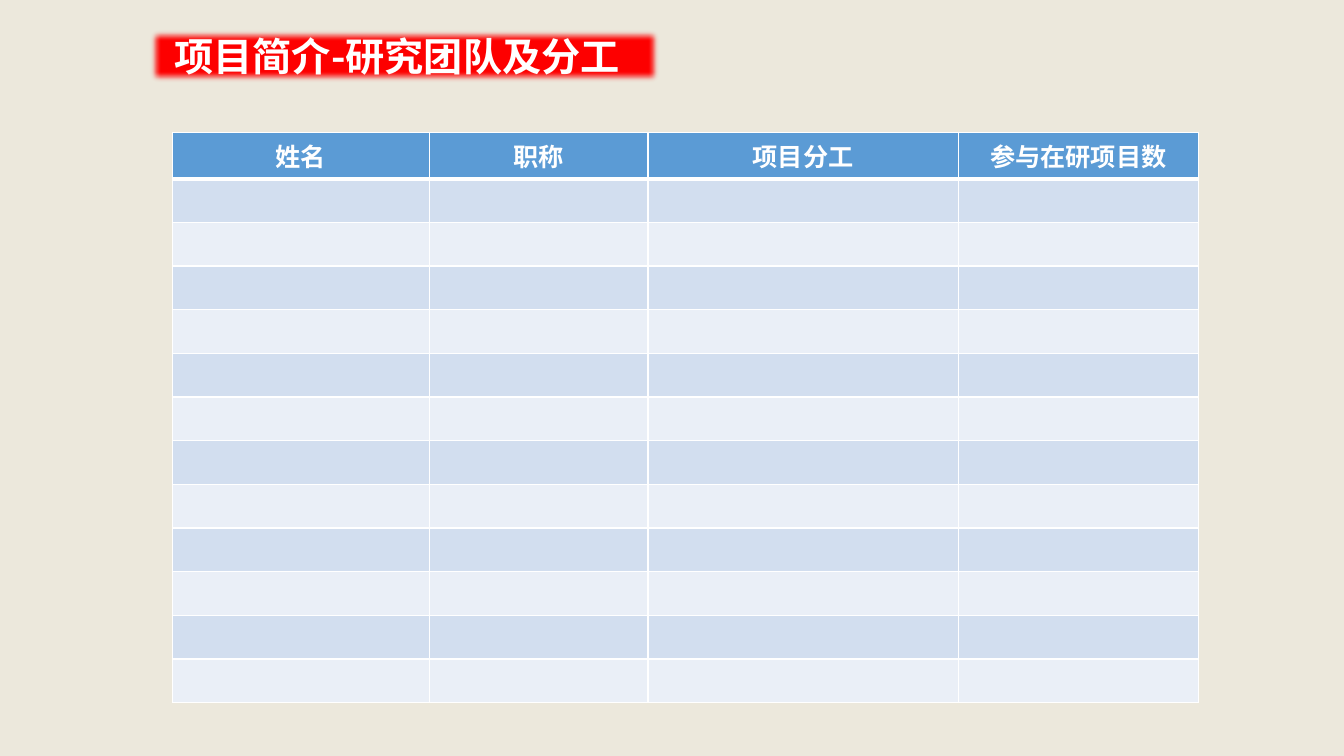
from dataclasses import dataclass
from lxml.etree import SubElement as Sub
from pptx import Presentation
from pptx.dml.color import RGBColor as Rgb
from pptx.enum.shapes import MSO_SHAPE as Shape
from pptx.enum.text import MSO_ANCHOR as Anchor, PP_ALIGN as Align
from pptx.oxml.ns import qn
from pptx.util import Cm, Pt


@dataclass(frozen=True)
class Theme:
    back: str = "ECE8DC"
    banner: str = "FF0000"
    head: str = "5B9BD5"
    bands: tuple = ("D2DEEF", "EAEFF7")
    white: str = "FFFFFF"
    latin: str = "Calibri"
    asian: str = "Noto Sans CJK SC"
    title: int = 28
    label: int = 18
    thin: int = 1
    thick: int = 3


THEME = Theme()
HEADS = ("姓名", "职称", "项目分工", "参与在研项目数")
WIDTHS = (6.48, 5.51, 7.82, 6.05)
ROWS = 13


def paint(fill, color):
    fill.solid()
    fill.fore_color.rgb = Rgb.from_string(color)


def write(para, text, size, latin):
    """Add one bold white run."""
    run = para.add_run()
    run.text = text
    font = run.font
    font.size, font.bold, font.name = Pt(size), True, latin
    font.color.rgb = Rgb.from_string(THEME.white)
    Sub(run._r.get_or_add_rPr(), qn("a:ea"), typeface=THEME.asian)


def edge(cell, base):
    """Draw the four white borders, which go before the cell fill."""
    props = cell._tc.get_or_add_tcPr()
    for side in ("L", "R", "T", "B"):
        width = base if side == "B" else THEME.thin
        line = Sub(props, qn(f"a:ln{side}"), w=str(Pt(width)))
        fill = Sub(line, qn("a:solidFill"))
        Sub(fill, qn("a:srgbClr"), val=THEME.white)


def banner(slide, left, top, width, height):
    """Red title bar with soft edges."""
    bar = slide.shapes.add_shape(
        Shape.RECTANGLE, Cm(left), Cm(top), Cm(width), Cm(height))
    bar.shadow.inherit = False
    paint(bar.fill, THEME.banner)
    bar.line.fill.background()
    soft = bar._element.spPr.find(qn("a:effectLst"))
    Sub(soft, qn("a:softEdge"), rad=str(Pt(5)))
    frame = bar.text_frame
    frame.word_wrap = False
    frame.vertical_anchor = Anchor.MIDDLE
    frame.margin_left = Cm(0.67)
    frame.margin_top = frame.margin_bottom = 0
    para = frame.paragraphs[0]
    para.alignment = Align.LEFT
    write(para, "项目简介-研究团队及分工", THEME.title, THEME.asian)


def roster(slide, left, top, width, height):
    """Team table: a header row above blank banded rows."""
    grid = slide.shapes.add_table(
        ROWS, len(HEADS), Cm(left), Cm(top), Cm(width), Cm(height)).table
    for col, size in zip(grid.columns, WIDTHS):
        col.width = Cm(size)
    for num, row in enumerate(grid.rows):
        row.height = Cm(height / ROWS)
        for cell, head in zip(row.cells, HEADS):
            edge(cell, THEME.thin if num else THEME.thick)
            paint(cell.fill, THEME.bands[(num - 1) % 2] if num else THEME.head)
            para = cell.text_frame.paragraphs[0]
            para.alignment = Align.CENTER
            if num == 0:
                write(para, head, THEME.label, THEME.latin)


def main():
    deck = Presentation()
    deck.slide_width, deck.slide_height = Cm(33.87), Cm(19.05)
    slide = deck.slides.add_slide(deck.slide_layouts[6])
    paint(slide.background.fill, THEME.back)
    banner(slide, 3.73, 0.69, 12.95, 1.45)
    roster(slide, 4.34, 3.33, sum(WIDTHS), 14.3)
    deck.save("out.pptx")


if __name__ == "__main__":
    main()
